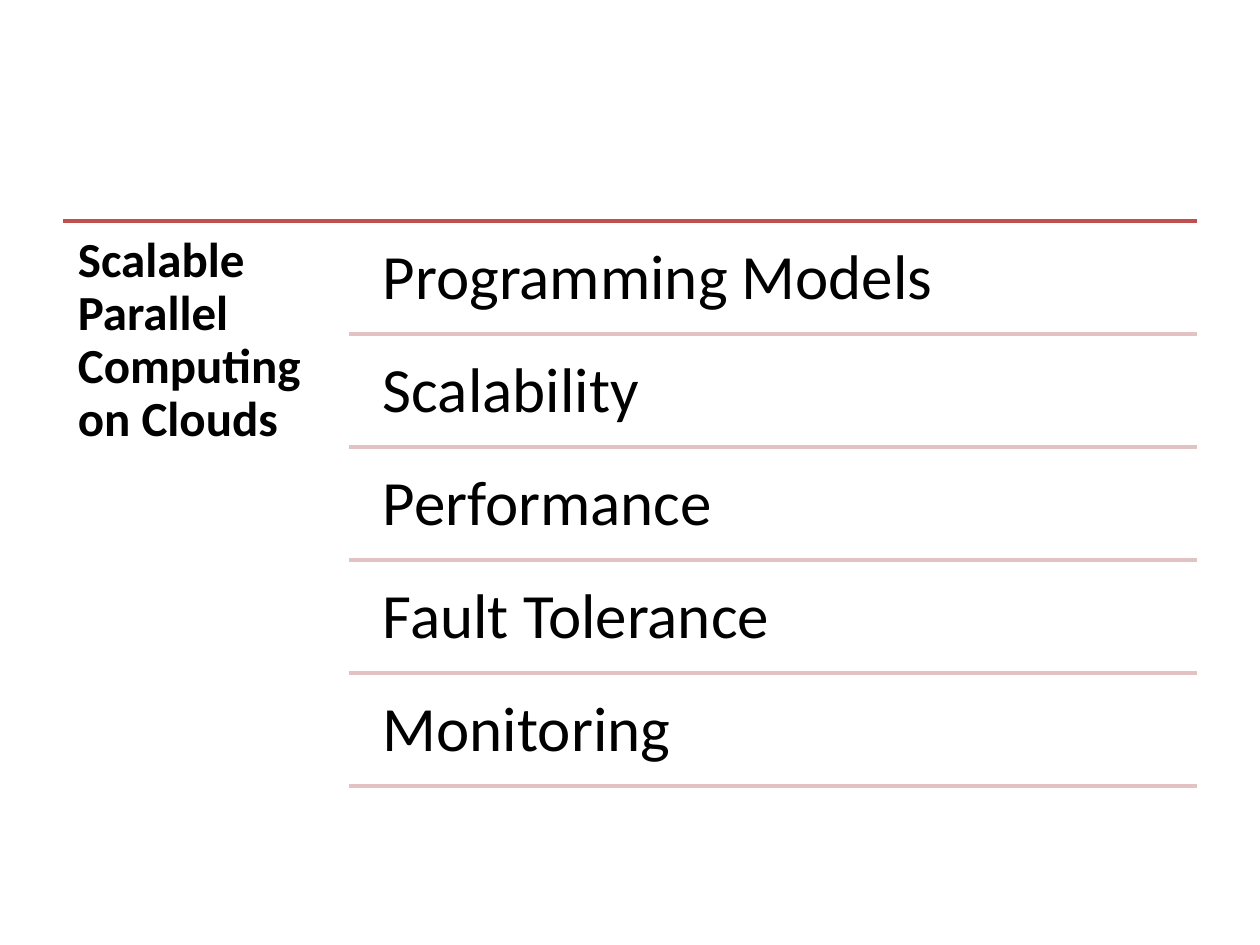
from dataclasses import dataclass

from lxml.etree import SubElement
from pptx import Presentation
from pptx.dml.color import RGBColor
from pptx.enum.shapes import MSO_CONNECTOR
from pptx.enum.text import MSO_ANCHOR, MSO_AUTO_SIZE, PP_ALIGN
from pptx.oxml.ns import qn
from pptx.util import Cm, Pt

# Layout in centimetres
LEFT, TOP, RIGHT = 1.27, 4.45, 24.13
SPLIT = 7.04
PITCH = 2.28
ROW_LEFT, ROW_GAP, ROW_HEIGHT = 7.34, 0.11, 2.16

TOPICS = ["Programming Models", "Scalability", "Performance",
          "Fault Tolerance", "Monitoring"]


@dataclass
class TopicRow:
    text: str
    index: int

    @property
    def top(self) -> float:
        return TOP + self.index * PITCH

    @property
    def bottom(self) -> float:
        return self.top + PITCH


def color(value: str) -> RGBColor:
    return RGBColor.from_string(value)


def write(sp, text: str, *, size: float, inset: float, bold: bool = False,
          fill: str = "000000") -> None:
    tf = sp.text_frame
    tf.word_wrap = True
    tf.auto_size = MSO_AUTO_SIZE.NONE
    tf.vertical_anchor = MSO_ANCHOR.TOP
    tf.margin_left = tf.margin_right = Cm(inset)
    tf.margin_top = tf.margin_bottom = Cm(inset)
    p = tf.paragraphs[0]
    p.alignment = PP_ALIGN.LEFT
    p.line_spacing = 0.9
    r = p.add_run()
    r.text = text
    r.font.name = "Calibri"
    r.font.size = Pt(size)
    r.font.bold = bold
    r.font.color.rgb = color(fill)


def add_rule(s, left: float, y: float, line: str) -> None:
    rule = s.shapes.add_connector(MSO_CONNECTOR.STRAIGHT,
                                  Cm(left), Cm(y), Cm(RIGHT), Cm(y))
    rule.line.color.rgb = color(line)
    rule.line.width = Pt(2)
    SubElement(rule._element.spPr, qn("a:effectLst"))


def add_row(s, row: TopicRow) -> None:
    sp = s.shapes.add_textbox(Cm(ROW_LEFT), Cm(row.top + ROW_GAP),
                              Cm(RIGHT - ROW_LEFT), Cm(ROW_HEIGHT))
    write(sp, row.text, size=36, inset=0.38)
    add_rule(s, SPLIT, row.bottom, "E2C2C2")


def main() -> None:
    prs = Presentation()
    prs.slide_width, prs.slide_height = Cm(25.4), Cm(19.05)
    s = prs.slides.add_slide(prs.slide_layouts[5])

    # Heading column under the top rule
    add_rule(s, LEFT, TOP, "C0504D")
    title = s.shapes.title
    title.left, title.top = Cm(LEFT), Cm(TOP)
    title.width, title.height = Cm(SPLIT - LEFT), Cm(11.5)
    write(title, "Scalable Parallel Computing on Clouds",
          size=28, inset=0.3, bold=True)

    # Topic rows, each closed by a pale rule
    for index, text in enumerate(TOPICS):
        add_row(s, TopicRow(text, index))

    prs.save("out.pptx")


if __name__ == "__main__":
    main()
